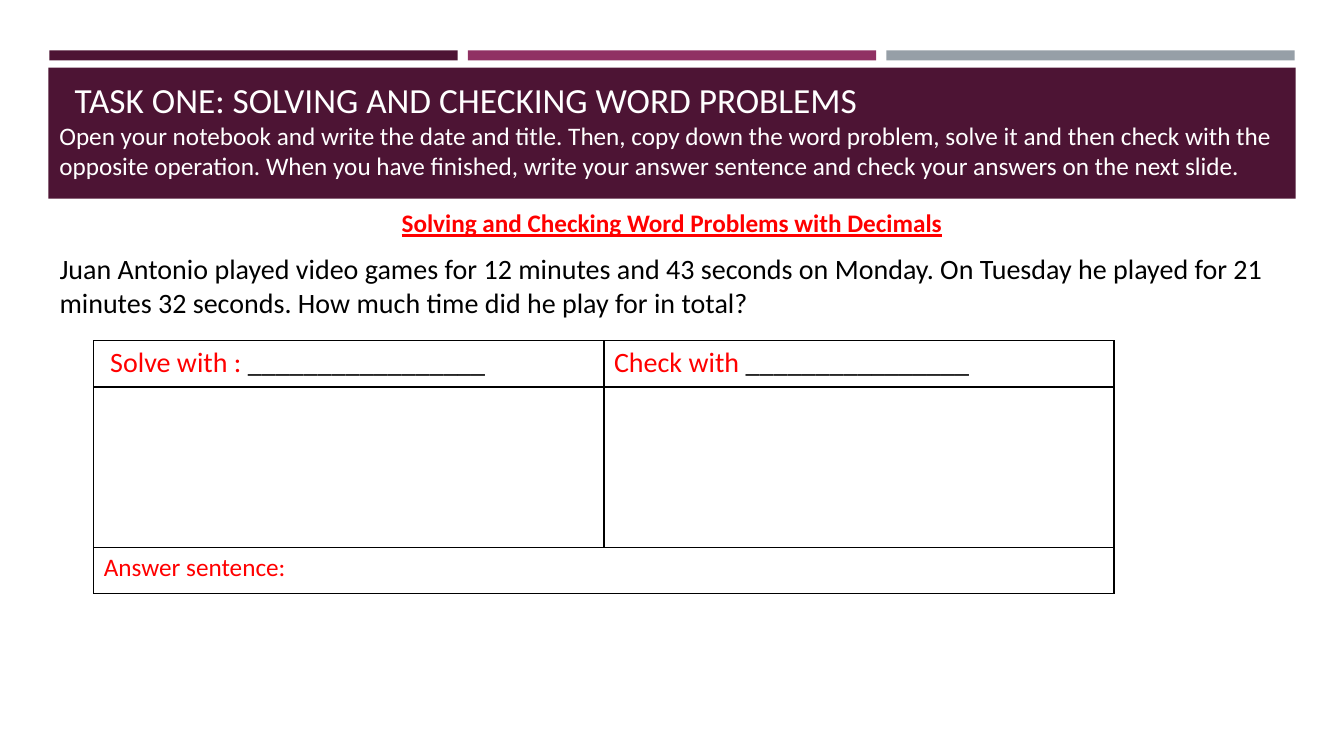
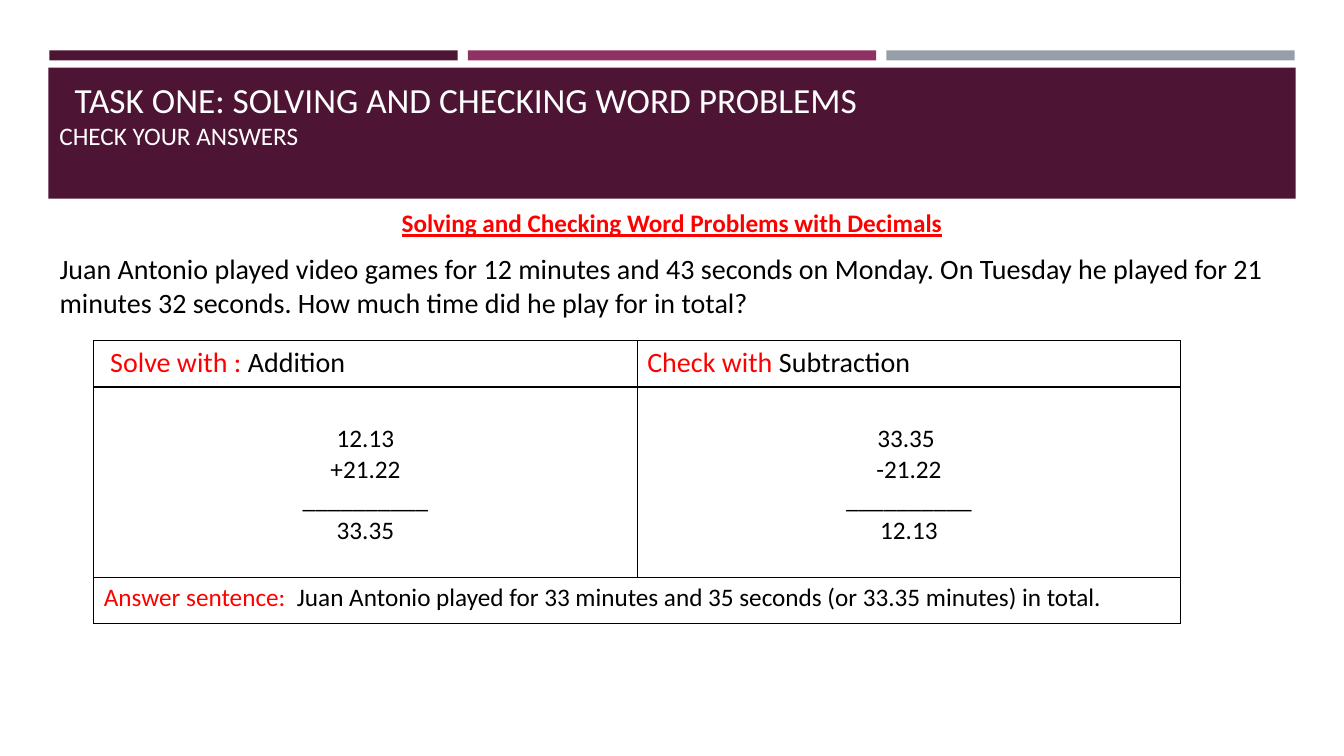
from lxml.etree import SubElement
from pptx import Presentation
from pptx.dml.color import RGBColor
from pptx.enum.shapes import MSO_SHAPE
from pptx.enum.text import MSO_ANCHOR, MSO_AUTO_SIZE, PP_ALIGN
from pptx.oxml import parse_xml
from pptx.oxml.ns import nsdecls, qn
from pptx.util import Inches, Pt

PLUM = RGBColor(0x4D, 0x14, 0x34)
MAGENTA = RGBColor(0x90, 0x31, 0x63)
GREY = RGBColor(0x96, 0x9F, 0xA7)
WHITE = RGBColor(0xFF, 0xFF, 0xFF)
RED = RGBColor(0xFF, 0x00, 0x00)
BLACK = RGBColor(0x00, 0x00, 0x00)

TITLE = "TASK ONE: SOLVING AND CHECKING WORD PROBLEMS"
HEADING = "Solving and Checking Word Problems with Decimals"
PROBLEM = (
    "Juan Antonio played video games for 12 minutes and 43 seconds on Monday. "
    "On Tuesday he played for 21 minutes 32 seconds. "
    "How much time did he play for in total?"
)
INSTRUCTIONS = (
    "Open your notebook and write the date and title. Then, copy down the word "
    "problem, solve it and then check with the opposite operation. When you have "
    "finished, write your answer sentence and check your answers on the next slide."
)


class Lesson:
    """Holds the deck, its style and the current slide."""

    font = "Calibri"
    left, width = 0.49, 12.35
    stripe_width, stripe_gap = 4.05, 0.1

    def __init__(self):
        self.deck = Presentation()
        self.deck.slide_width = Inches(13.33)
        self.deck.slide_height = Inches(7.5)
        self.page = None

    def add_page(self):
        """Start a slide with its bands and shared title."""
        self.page = self.deck.slides.add_slide(self.deck.slide_layouts[1])
        self.band(0.48, 0.67, 12.37, 1.3, PLUM)
        for index, color in enumerate((PLUM, MAGENTA, GREY)):
            left = self.left + index * (self.stripe_width + self.stripe_gap)
            self.band(left, 0.5, self.stripe_width, 0.1, color)
        title = self.page.shapes.title
        self.place(title, 0.64, 0.7, 12.06, 0.55, MSO_ANCHOR.BOTTOM)
        self.add_text(title.text_frame, [[(TITLE, 25.2, WHITE)]])

    def band(self, left, top, width, height, color):
        """Draw a plain bar behind the placeholders."""
        bar = self.page.shapes.add_shape(
            MSO_SHAPE.RECTANGLE, *map(Inches, (left, top, width, height))
        )
        bar.shadow.inherit = False
        bar.fill.solid()
        bar.fill.fore_color.rgb = color
        bar.line.fill.background()
        self.page.shapes._spTree.insert(2, bar._element)

    def place(self, shape, left, top, width, height, anchor=MSO_ANCHOR.TOP):
        """Move a text shape and set up its frame."""
        spots = {"left": left, "top": top, "width": width, "height": height}
        for name, value in spots.items():
            setattr(shape, name, Inches(value))
        frame = {
            "word_wrap": True,
            "auto_size": MSO_AUTO_SIZE.NONE,
            "vertical_anchor": anchor,
        }
        for name, value in frame.items():
            setattr(shape.text_frame, name, value)

    def add_text(self, frame, lines, alignment=PP_ALIGN.LEFT):
        """Add paragraphs, each a list of (text, size, color) spans."""
        for index, spans in enumerate(lines):
            para = frame.add_paragraph() if index else frame.paragraphs[0]
            para.alignment = alignment
            for text, size, color in spans:
                span = para.add_run()
                span.text = text
                style = {"name": self.font, "size": Pt(size)}
                for name, value in style.items():
                    setattr(span.font, name, value)
                span.font.color.rgb = color

    def subtitle(self, text, height):
        """Add the white text under the title."""
        box = self.page.shapes.add_textbox(0, 0, 0, 0)
        self.place(box, self.left, 1.14, self.width, height)
        self.add_text(box.text_frame, [[(text, 18, WHITE)]])

    def problem(self):
        """Fill the body with the heading and the word problem."""
        body = self.page.placeholders[1]
        self.place(body, self.left, 2.01, self.width, 5.49)
        frame = body.text_frame
        self.add_text(frame, [[(HEADING, 18, RED)], [(PROBLEM, 20, BLACK)]])
        heading = frame.paragraphs[0]
        heading.alignment = PP_ALIGN.CENTER
        for name in ("bold", "underline"):
            setattr(heading.runs[0].font, name, True)
        for para in frame.paragraphs:
            para.space_after = Pt(6)
            properties = para._p.get_or_add_pPr()
            properties.set("marL", "0")
            properties.set("indent", "0")
            SubElement(properties, qn("a:buNone"))

    def border(self, cell):
        """Clear a cell and outline it in black."""
        cell.fill.background()
        properties = cell._tc.get_or_add_tcPr()
        for index, side in enumerate("LRTB"):
            properties.insert(index, parse_xml(
                f'<a:ln{side} {nsdecls("a")} w="{Pt(1)}"><a:solidFill>'
                f'<a:srgbClr val="{BLACK}"/></a:solidFill></a:ln{side}>'
            ))

    def worksheet(self, column, work_height, methods, sums=(), answer=()):
        """Add the solve and check table."""
        heights = (0.46, work_height, 0.46)
        frame = self.page.shapes.add_table(
            3, 2, *map(Inches, (0.93, 3.38, 2 * column, sum(heights)))
        )
        table = frame.table
        table.first_row = table.horz_banding = False
        for row, height in zip(table.rows, heights):
            row.height = Inches(height)
            for cell in row.cells:
                self.border(cell)
        table.cell(2, 0).merge(table.cell(2, 1))
        labels = (" Solve with : ", "Check with ")
        for index, (label, method) in enumerate(zip(labels, methods)):
            spans = [(label, 20, RED), (method, 20, BLACK)]
            self.add_text(table.cell(0, index).text_frame, [spans])
        for index, lines in enumerate(sums):
            cell = table.cell(1, index)
            cell.margin_top = Inches(0.36)
            spans = [[(line, 18, BLACK)] for line in lines]
            self.add_text(cell.text_frame, spans, PP_ALIGN.CENTER)
        spans = [("Answer sentence:" + "  " * len(answer), 18, RED)]
        spans += [(text, 18, BLACK) for text in answer]
        self.add_text(table.cell(2, 0).text_frame, [spans])


def main():
    """Build both slides and save the deck."""
    lesson = Lesson()

    lesson.add_page()
    lesson.problem()
    lesson.subtitle(INSTRUCTIONS, 0.71)
    lesson.worksheet(5.06, 1.59, ("_" * 17, "_" * 16))

    lesson.add_page()
    lesson.problem()
    lesson.subtitle("CHECK YOUR ANSWERS", 0.4)
    rule = "_" * 10
    lesson.worksheet(
        5.39,
        1.89,
        ("Addition", "Subtraction"),
        ((" 12.13 ", "+21.22", rule, "33.35"), ("33.35 ", "-21.22", rule, "12.13")),
        ("Juan Antonio played for 33 minutes and 35 seconds "
         "(or 33.35 minutes) in total.",),
    )
    lesson.deck.save("out.pptx")


if __name__ == "__main__":
    main()
